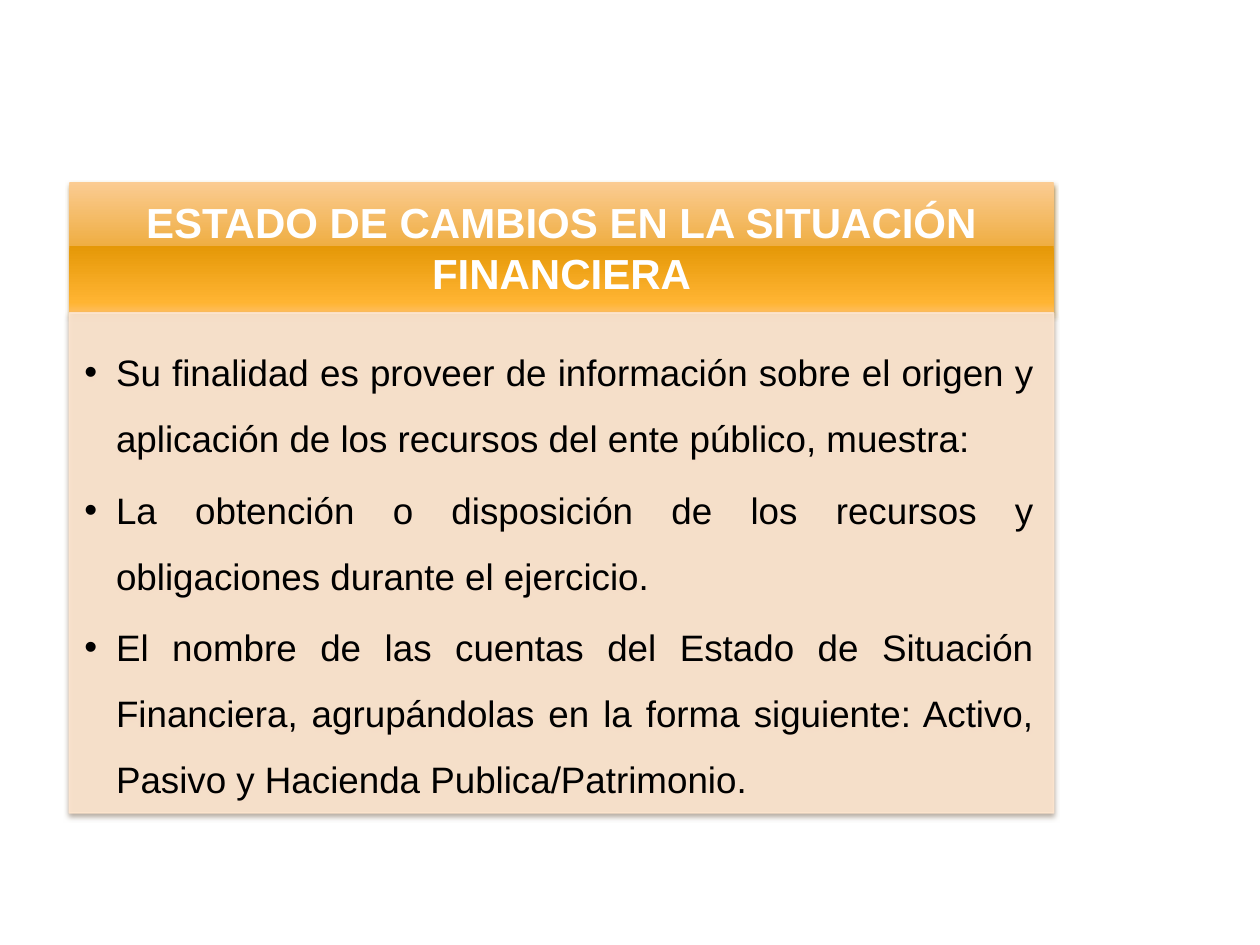
"""Build the slide on the statement of changes in financial position."""
import pptx
import pptx.util
import pptx.oxml
import pptx.oxml.ns
from pptx.dml.color import RGBColor
from pptx.enum.shapes import MSO_SHAPE
from pptx.enum.text import MSO_ANCHOR, PP_ALIGN
from pptx.util import Cm

TITLE = "ESTADO DE CAMBIOS EN LA SITUACIÓN FINANCIERA"
POINTS = [
    "Su finalidad es proveer de información sobre el origen y aplicación de los recursos del ente público, muestra:",
    "La obtención o disposición de los recursos y obligaciones durante el ejercicio.",
    "El nombre de las cuentas del Estado de Situación Financiera, agrupándolas en la forma siguiente: "
    "Activo, Pasivo y Hacienda Publica/Patrimonio.",
]
WHITE = RGBColor(0xFF, 0xFF, 0xFF)
BLACK = RGBColor(0x00, 0x00, 0x00)
CREAM = RGBColor(0xFD, 0xE5, 0xCE)
GOLD = RGBColor(0x9A, 0x70, 0x23)
TAUPE = RGBColor(0x9C, 0x8E, 0x7F)
STOPS = [
    (0, RGBColor(0xFB, 0xCC, 0x93)),
    (49, RGBColor(0xEF, 0xAE, 0x43)),
    (49, RGBColor(0xE5, 0x98, 0x07)),
    (92, RGBColor(0xFF, 0xB4, 0x32)),
    (100, RGBColor(0xFF, 0xBE, 0x5F)),
]
LEFT, TOP, WIDTH = 1.4, 3.66, 19.84
HEAD, BODY = 2.65, 10.08


def add(node, tag, **attrs):
    child = pptx.oxml.ns.qn("a:" + tag)
    child = node.makeelement(child, {k: str(v) for k, v in attrs.items()})
    node.append(child)
    return child


def panel(slide, top, high, shade, pads):
    box = slide.shapes.add_shape(MSO_SHAPE.RECTANGLE, Cm(LEFT), Cm(top), Cm(WIDTH), Cm(high))
    box.shadow.inherit = False
    effect = box._element.spPr.find(pptx.oxml.ns.qn("a:effectLst"))
    cast = add(effect, "outerShdw", blurRad=39000, dist=25400, dir=5400000, rotWithShape=0)
    add(add(cast, "srgbClr", val=shade), "alpha", val=83000)
    frame = box.text_frame
    frame.word_wrap = True
    frame.margin_left, frame.margin_top, frame.margin_right, frame.margin_bottom = map(Cm, pads)
    return box


def style(para, size, color, bold):
    for run in para.runs:
        run.font.name = "Arial"
        run.font.size = pptx.util.Pt(size)
        run.font.bold = bold
        run.font.color.rgb = color


def header(slide):
    box = panel(slide, TOP, HEAD, GOLD, (0.48, 0.28, 0.48, 0.28))
    box.line.fill.background()
    box.fill.gradient()
    box.fill.gradient_angle = 270
    stops = box._element.spPr.find(".//" + pptx.oxml.ns.qn("a:gsLst"))
    for old in list(stops):
        stops.remove(old)
    for place, color in STOPS:
        add(add(stops, "gs", pos=place * 1000), "srgbClr", val=color)
    box.text_frame.vertical_anchor = MSO_ANCHOR.MIDDLE
    para = box.text_frame.paragraphs[0]
    para.text = TITLE
    para.alignment = PP_ALIGN.CENTER
    style(para, 24, WHITE, True)


def body(slide):
    box = panel(slide, TOP + HEAD, BODY, TAUPE, (0.3, 0.3, 0.4, 0.46))
    box.line.width = pptx.util.Pt(0.9)
    for fill in (box.fill, box.line.fill):
        fill.solid()
        fill.fore_color.rgb = CREAM
    for color in box._element.spPr.findall(".//" + pptx.oxml.ns.qn("a:solidFill")):
        add(color[0], "alpha", val=90000)
    frame = box.text_frame
    frame.vertical_anchor = MSO_ANCHOR.TOP
    frame.text = "\n".join(POINTS)
    for para in frame.paragraphs:
        para.alignment = PP_ALIGN.JUSTIFY
        para.level = 1
        para.line_spacing = 1.5
        para.space_after = pptx.util.Pt(3)
        props = para._p.get_or_add_pPr()
        props.set("marL", str(Cm(0.64)))
        props.set("indent", str(-Cm(0.64)))
        add(props, "buFont", typeface="Arial")
        add(props, "buChar", char="•")
        style(para, 21, BLACK, False)


def main():
    deck = pptx.Presentation()
    deck.slide_width, deck.slide_height = Cm(25.4), Cm(19.05)
    slide = deck.slides.add_slide(deck.slide_layouts[6])
    header(slide)
    body(slide)
    deck.save("out.pptx")


if __name__ == "__main__":
    main()
